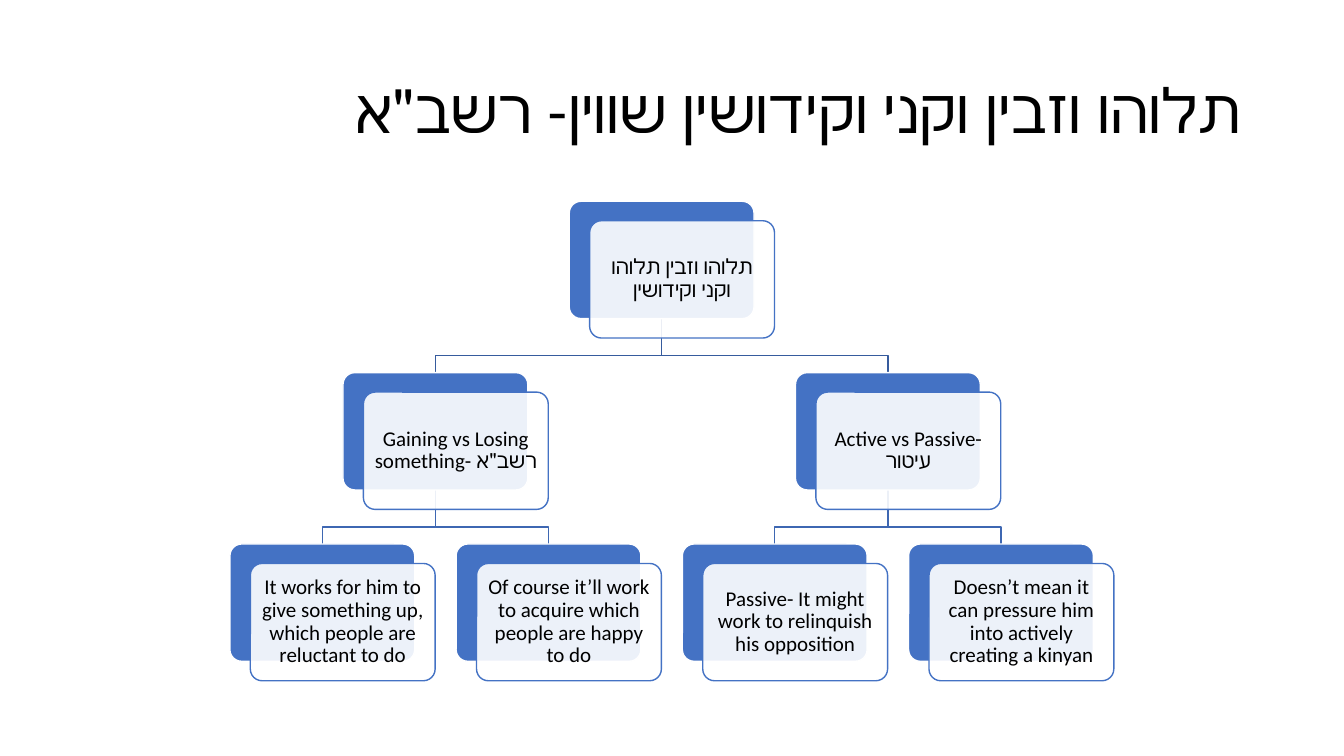
import pptx
import pptx.util
import pptx.dml.color
import pptx.enum.shapes
import pptx.enum.text
import pptx.oxml
import pptx.oxml.ns

Pt = pptx.util.Pt
RGBColor = pptx.dml.color.RGBColor
ALIGN = pptx.enum.text.PP_ALIGN

BLUE = RGBColor(0x44, 0x72, 0xC4)
ROOT_LINE = RGBColor(0x36, 0x5B, 0x9D)
BRANCH_LINE = RGBColor(0x3E, 0x67, 0xB2)
WHITE = RGBColor(0xFF, 0xFF, 0xFF)
BLACK = RGBColor(0x00, 0x00, 0x00)
FONT = "Calibri"

# Tree grid: columns count leaves, levels count rows
FIRST_CENTER, COLUMN_STEP = 230.2, 161.6
FIRST_TOP, LEVEL_STEP = 143.8, 122.4
CARD_W, CARD_H = 132, 83.8
SHIFT_X, SHIFT_Y = 14.6, 13.9
ELBOW_RISE = 12.2

# Each node: text, column, child nodes
TREE = ("תלוהו וזבין תלוהו וקני וקידושין", 1.5, [
    ("Gaining vs Losing something- רשב\"א", 0.5, [
        ("It works for him to give something up, which people are reluctant to do", 0, []),
        ("Of course it’ll work to acquire which people are happy to do", 1, []),
    ]),
    ("Active vs Passive- עיטור", 2.5, [
        ("Passive- It might work to relinquish his opposition", 2, []),
        ("Doesn’t mean it can pressure him into actively creating a kinyan", 3, []),
    ]),
])


def center_x(column):
    return FIRST_CENTER + column * COLUMN_STEP


def level_top(level):
    return FIRST_TOP + level * LEVEL_STEP


def write(tf, text, size, align):
    tf.word_wrap = True
    tf.vertical_anchor = pptx.enum.text.MSO_ANCHOR.MIDDLE
    p = tf.paragraphs[0]
    p.alignment = align
    p.line_spacing = 0.9
    r = p.add_run()
    r.text = text
    r.font.size = Pt(size)
    r.font.name = FONT
    r.font.color.rgb = BLACK
    return p


def add_title(slide, text):
    sp = slide.shapes.add_textbox(Pt(66), Pt(28.8), Pt(828), Pt(104.4))
    p = write(sp.text_frame, text, 44, ALIGN.RIGHT)
    p._p.get_or_add_pPr().set("rtl", "1")


def add_elbow(slide, column, child_column, level):
    x, child_x = center_x(column), center_x(child_column)
    child_top = level_top(level + 1)
    bend = child_top - ELBOW_RISE
    builder = slide.shapes.build_freeform(Pt(x), Pt(level_top(level) + CARD_H))
    points = [(x, bend), (child_x, bend), (child_x, child_top)]
    builder.add_line_segments([(Pt(a), Pt(b)) for a, b in points], close=False)
    sp = builder.convert_to_shape()
    sp.shadow.inherit = False
    sp.fill.background()
    sp.line.color.rgb = BRANCH_LINE if level else ROOT_LINE
    sp.line.width = Pt(1)


def add_panel(slide, x, y, fill, line):
    sp = slide.shapes.add_shape(pptx.enum.shapes.MSO_SHAPE.ROUNDED_RECTANGLE,
                                Pt(x), Pt(y), Pt(CARD_W), Pt(CARD_H))
    sp.adjustments[0] = 0.1
    sp.shadow.inherit = False
    sp.fill.solid()
    sp.fill.fore_color.rgb = fill
    sp.line.color.rgb = line
    sp.line.width = Pt(1)
    return sp


def add_card(slide, text, column, level):
    x, y = center_x(column) - CARD_W / 2, level_top(level)
    add_panel(slide, x, y, BLUE, WHITE)
    sp = add_panel(slide, x + SHIFT_X, y + SHIFT_Y, WHITE, BLUE)
    # Front panel lets a little of the blue through
    color = sp.fill._xPr.find(".//" + pptx.oxml.ns.qn("a:srgbClr"))
    color.append(pptx.oxml.parse_xml(
        '<a:alpha %s val="90000"/>' % pptx.oxml.ns.nsdecls("a")))
    tf = sp.text_frame
    tf.margin_left = tf.margin_right = tf.margin_top = tf.margin_bottom = Pt(4.5)
    write(tf, text, 15, ALIGN.CENTER)


def add_elbows(slide, node, level=0):
    _, column, children = node
    for child in children:
        add_elbow(slide, column, child[1], level)
        add_elbows(slide, child, level + 1)


def add_cards(slide, node, level=0):
    text, column, children = node
    add_card(slide, text, column, level)
    for child in children:
        add_cards(slide, child, level + 1)


def main():
    prs = pptx.Presentation()
    prs.slide_width, prs.slide_height = Pt(960), Pt(540)
    slide = prs.slides.add_slide(prs.slide_layouts[6])

    add_title(slide, "תלוהו וזבין וקני וקידושין שווין- רשב\"א")

    # Lines lie behind the cards
    add_elbows(slide, TREE)
    add_cards(slide, TREE)

    prs.save("out.pptx")


if __name__ == "__main__":
    main()
